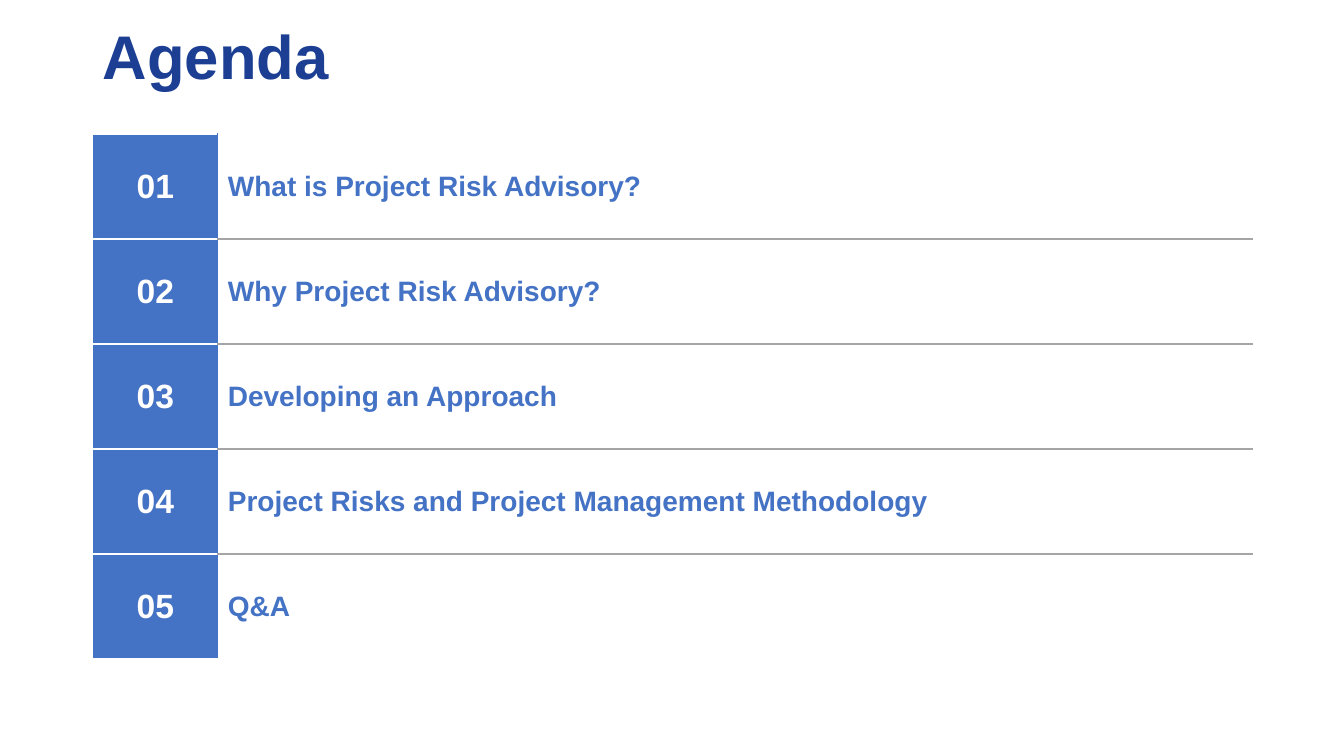
"""Build the agenda slide: a title above a numbered table of topics."""
from pptx import Presentation
from pptx.dml.color import RGBColor
from pptx.enum.text import MSO_ANCHOR, PP_ALIGN
from pptx.oxml.ns import qn
from pptx.util import Inches, Pt
from lxml.etree import SubElement

COLORS = {"navy": "1C3F94", "blue": "4472C4", "gray": "A5A5A5", "white": "FFFFFF"}
TOPICS = [
    "What is Project Risk Advisory?",
    "Why Project Risk Advisory?",
    "Developing an Approach",
    "Project Risks and Project Management Methodology",
    "Q&A",
]


def write(tf, text, size, color, align=PP_ALIGN.LEFT, spacing=None):
    p = tf.paragraphs[0]
    p.alignment = align
    p.line_spacing = spacing
    r = p.add_run()
    r.text = text
    r.font.name = "Arial"
    r.font.size = Pt(size)
    r.font.bold = True
    r.font.color.rgb = RGBColor.from_string(COLORS[color])


def format_cell(cell, fill, **borders):
    tcPr = cell._tc.get_or_add_tcPr()
    for side in "LRTB":
        ln = SubElement(tcPr, qn(f"a:ln{side}"), w=str(Pt(1)))
        line_fill = SubElement(ln, qn("a:solidFill"))
        SubElement(line_fill, qn("a:srgbClr"), val=COLORS[borders[side]])
    cell.fill.solid()
    cell.fill.fore_color.rgb = RGBColor.from_string(COLORS[fill])
    cell.vertical_anchor = MSO_ANCHOR.MIDDLE


prs = Presentation()
prs.slide_width = Inches(13.33)
prs.slide_height = Inches(7.5)
s = prs.slides.add_slide(prs.slide_layouts[5])

title = s.shapes.title
title.left, title.top = Inches(0.92), Inches(0)
title.width, title.height = Inches(11.5), Inches(1.18)
title.text_frame.vertical_anchor = MSO_ANCHOR.MIDDLE
write(title.text_frame, "Agenda", 44, "navy", spacing=0.9)

table = s.shapes.add_table(len(TOPICS), 2, Inches(0.92), Inches(1.33),
                           Inches(11.5), Inches(5.21)).table
table.first_row = False
table.horz_banding = False
table.columns[0].width = Inches(1.24)
table.columns[1].width = Inches(10.26)

last = len(TOPICS) - 1
for i, topic in enumerate(TOPICS):
    number_cell, topic_cell = table.cell(i, 0), table.cell(i, 1)
    format_cell(number_cell, "blue", L="white", R="blue", T="white", B="white")
    write(number_cell.text_frame, f"{i + 1:02}", 24, "white", align=PP_ALIGN.CENTER)
    format_cell(topic_cell, "white", L="blue", R="white",
                T="white" if i == 0 else "gray",
                B="white" if i == last else "gray")
    write(topic_cell.text_frame, topic, 20, "blue")

prs.save("out.pptx")
